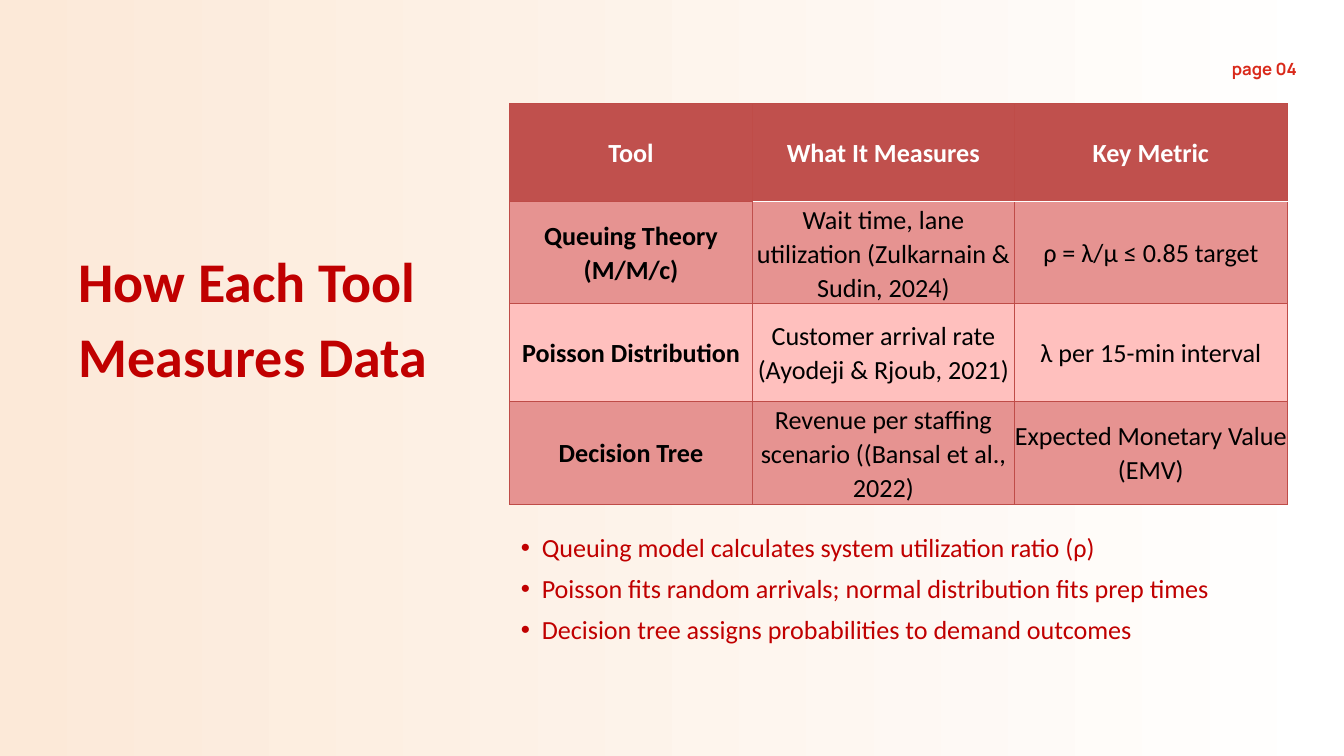
from lxml.etree import SubElement
from pptx import Presentation
from pptx.dml.color import RGBColor
from pptx.enum.text import MSO_ANCHOR, MSO_AUTO_SIZE, PP_ALIGN
from pptx.oxml import parse_xml
from pptx.oxml.ns import nsdecls, qn
from pptx.util import Pt

color = RGBColor.from_string


def add_text_box(left, top, width, height):
    text_frame = slide.shapes.add_textbox(Pt(left), Pt(top), Pt(width), Pt(height)).text_frame
    text_frame.margin_left = text_frame.margin_right = 0
    text_frame.margin_top = text_frame.margin_bottom = 0
    text_frame.word_wrap = True
    text_frame.auto_size = MSO_AUTO_SIZE.SHAPE_TO_FIT_TEXT
    return text_frame


def add_run(paragraph, text, size, hex_color, bold=False, font="Calibri"):
    run = paragraph.add_run()
    run.text = text
    run.font.name = font
    run.font.size = Pt(size)
    run.font.bold = bold
    run.font.color.rgb = color(hex_color)


presentation = Presentation()
presentation.slide_width = Pt(1440)
presentation.slide_height = Pt(810)
slide = presentation.slides.add_slide(presentation.slide_layouts[6])

# Background gradient, left to right
background = slide.background.fill
background.gradient()
background.gradient_angle = 0
for stop, hex_color in zip(background.gradient_stops, ("FCE9D8", "FFFFFF")):
    stop.color.rgb = color(hex_color)

# Page number
paragraph = add_text_box(1319.76, 69.12, 82.8, 16.56).paragraphs[0]
paragraph.line_spacing = Pt(14.9)
add_run(paragraph, "page 04", 18, "D9291A", True, "Manrope")

# Title
paragraph = add_text_box(84.24, 254.88, 447.12, 159.12).paragraphs[0]
paragraph.line_spacing = Pt(81)
add_run(paragraph, "How Each Tool Measures Data", 60, "C00000", True)

# Bullet list
bullets = [
    "Queuing model calculates system utilization ratio (ρ)",
    "Poisson fits random arrivals; normal distribution fits prep times",
    "Decision tree assigns probabilities to demand outcomes",
]
text_frame = add_text_box(558, 567.36, 792, 123.12)
for index, bullet in enumerate(bullets):
    paragraph = text_frame.add_paragraph() if index else text_frame.paragraphs[0]
    properties = paragraph._p.get_or_add_pPr()
    properties.set("marL", str(Pt(22.5)))
    properties.set("indent", str(-Pt(22.5)))
    SubElement(properties, qn("a:buFont"), typeface="Arial")
    SubElement(properties, qn("a:buChar"), char="•")
    tab_list = SubElement(properties, qn("a:tabLst"))
    SubElement(tab_list, qn("a:tab"), pos=str(Pt(36)), algn="l")
    paragraph.line_spacing = 1.07
    paragraph.space_after = Pt(8)
    add_run(paragraph, bullet, 28, "C00000")

# Table of tools
rows = [
    ("Tool", "What It Measures", "Key Metric"),
    ("Queuing Theory (M/M/c)", "Wait time, lane utilization (Zulkarnain & Sudin, 2024)",
     "ρ = λ/μ ≤ 0.85 target"),
    ("Poisson Distribution", "Customer arrival rate (Ayodeji & Rjoub, 2021)",
     "λ per 15-min interval"),
    ("Decision Tree", "Revenue per staffing scenario ((Bansal et al., 2022)",
     "Expected Monetary Value (EMV)"),
]
row_fills = ["C0504D", "E69391", "FFC0BE", "E69391"]
column_widths = [260.64, 280.08, 293.04]
row_height = 105.12
table = slide.shapes.add_table(
    len(rows), len(column_widths), Pt(545.76), Pt(110.88),
    Pt(sum(column_widths)), Pt(row_height * len(rows))).table
table.first_row = table.horz_banding = False
for column, width in zip(table.columns, column_widths):
    column.width = Pt(width)

for row_index, texts in enumerate(rows):
    table.rows[row_index].height = Pt(row_height)
    header = row_index == 0
    for column_index, text in enumerate(texts):
        cell = table.cell(row_index, column_index)
        cell.vertical_anchor = MSO_ANCHOR.MIDDLE
        cell.margin_left = cell.margin_right = Pt(0.72)
        cell.margin_top = cell.margin_bottom = Pt(0.72)
        cell.fill.solid()
        cell.fill.fore_color.rgb = color(row_fills[row_index])
        paragraph = cell.text_frame.paragraphs[0]
        paragraph.alignment = PP_ALIGN.CENTER
        paragraph.line_spacing = 1.07
        paragraph.space_after = Pt(8)
        add_run(paragraph, text, 28, "FFFFFF" if header else "000000",
                header or column_index == 0)

        # Borders: thin grid, white rule under the header, thick line after the first column
        borders = dict.fromkeys(("lnL", "lnR", "lnT", "lnB"), ("BF4C48", 0.75))
        if column_index > 0 and row_index < 2:
            borders["lnB" if header else "lnT"] = ("FFFFFF", 2)
        if column_index < 2 and not header:
            borders["lnL" if column_index else "lnR"] = ("C0504D", 2)
        properties = cell._tc.get_or_add_tcPr()
        for position, (side, (hex_color, width)) in enumerate(borders.items()):
            properties.insert(position, parse_xml(
                f'<a:{side} {nsdecls("a")} w="{Pt(width)}"><a:solidFill>'
                f'<a:srgbClr val="{hex_color}"/></a:solidFill></a:{side}>'))

presentation.save("out.pptx")
